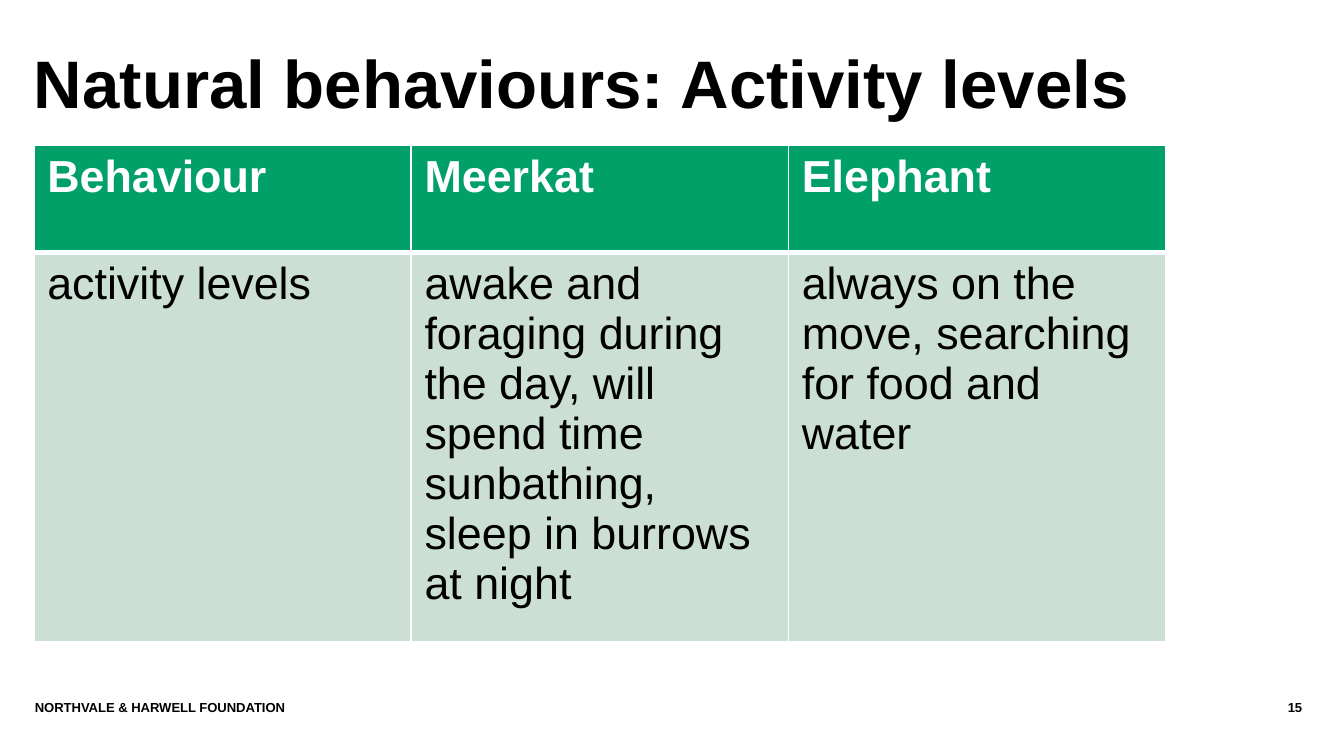
from dataclasses import dataclass

from lxml.etree import SubElement
from pptx import Presentation
from pptx.dml.color import RGBColor
from pptx.enum.text import MSO_ANCHOR, PP_ALIGN
from pptx.oxml.ns import qn
from pptx.util import Cm, Pt


@dataclass(frozen=True)
class Theme:
    font: str = "Arial"
    ink: str = "000000"
    paper: str = "FFFFFF"
    header_fill: str = "00A068"
    body_fill: str = "CCDFD4"
    title_size: int = 36
    table_size: int = 24
    footer_size: int = 7
    thin_rule: int = 1
    thick_rule: int = 3


@dataclass(frozen=True)
class TextItem:
    text: str
    left: float
    top: float
    width: float
    height: float
    size: int
    align: PP_ALIGN = PP_ALIGN.LEFT
    anchor: MSO_ANCHOR = MSO_ANCHOR.TOP
    line_spacing: float = 1.0


THEME = Theme()
MARGIN = 0.64
FOOTER_TOP = 13.23

TEXT_ITEMS = [
    TextItem("NORTHVALE & HARWELL FOUNDATION", 0.66, FOOTER_TOP, 21.36, 0.76,
             THEME.footer_size),
    TextItem("15", 22.1, FOOTER_TOP, 2.51, 0.76, THEME.footer_size,
             align=PP_ALIGN.RIGHT),
    TextItem("Natural behaviours: Activity levels", MARGIN, 0.69, 23.44, 1.93,
             THEME.title_size, anchor=MSO_ANCHOR.MIDDLE, line_spacing=0.85),
]

TABLE_TOP = 2.74
COLUMN_WIDTH = 7.13
ROW_HEIGHTS = [2.03, 6.86]
BEHAVIOUR_ROWS = [
    ["Behaviour", "Meerkat", "Elephant"],
    [
        "activity levels",
        "awake and foraging during the day, will spend time sunbathing, "
        "sleep in burrows at night",
        "always on the move, searching for food and water",
    ],
]


def write_text(frame, text: str, *, size: int, color: str, bold: bool,
               align: PP_ALIGN = PP_ALIGN.LEFT, line_spacing: float = 1.0) -> None:
    para = frame.paragraphs[0]
    para.alignment = align
    para.line_spacing = line_spacing
    span = para.add_run()
    span.text = text
    span.font.name = THEME.font
    span.font.size = Pt(size)
    span.font.bold = bold
    span.font.color.rgb = RGBColor.from_string(color)


def add_text(page, item: TextItem) -> None:
    box = page.shapes.add_textbox(Cm(item.left), Cm(item.top),
                                  Cm(item.width), Cm(item.height))
    frame = box.text_frame
    frame.word_wrap = True
    frame.vertical_anchor = item.anchor
    frame.margin_left = frame.margin_right = 0
    frame.margin_top = frame.margin_bottom = 0
    write_text(frame, item.text, size=item.size, color=THEME.ink, bold=True,
               align=item.align, line_spacing=item.line_spacing)


def set_borders(cell, *, top: int, bottom: int) -> None:
    """Rule all four sides; the schema wants borders ahead of the fill."""
    properties = cell._tc.get_or_add_tcPr()
    widths = {"a:lnL": THEME.thin_rule, "a:lnR": THEME.thin_rule,
              "a:lnT": top, "a:lnB": bottom}
    for position, (tag, width) in enumerate(widths.items()):
        line = SubElement(properties, qn(tag), w=str(Pt(width)))
        fill = SubElement(line, qn("a:solidFill"))
        SubElement(fill, qn("a:srgbClr"), val=THEME.paper)
        properties.insert(position, line)


def add_behaviour_table(page) -> None:
    column_count = len(BEHAVIOUR_ROWS[0])
    table = page.shapes.add_table(
        len(BEHAVIOUR_ROWS), column_count, Cm(MARGIN), Cm(TABLE_TOP),
        Cm(COLUMN_WIDTH * column_count), Cm(sum(ROW_HEIGHTS))).table
    for column in table.columns:
        column.width = Cm(COLUMN_WIDTH)
    for row_index, texts in enumerate(BEHAVIOUR_ROWS):
        table.rows[row_index].height = Cm(ROW_HEIGHTS[row_index])
        header = row_index == 0
        for column_index, text in enumerate(texts):
            cell = table.cell(row_index, column_index)
            cell.fill.solid()
            cell.fill.fore_color.rgb = RGBColor.from_string(
                THEME.header_fill if header else THEME.body_fill)
            set_borders(cell,
                        top=THEME.thin_rule if header else THEME.thick_rule,
                        bottom=THEME.thick_rule if header else THEME.thin_rule)
            write_text(cell.text_frame, text, size=THEME.table_size, bold=header,
                       color=THEME.paper if header else THEME.ink)


def main() -> None:
    deck = Presentation()
    deck.slide_width = Cm(25.4)
    deck.slide_height = Cm(14.29)
    page = deck.slides.add_slide(deck.slide_layouts[6])
    page.background.fill.solid()
    page.background.fill.fore_color.rgb = RGBColor.from_string(THEME.paper)
    for item in TEXT_ITEMS:
        add_text(page, item)
    add_behaviour_table(page)
    deck.save("out.pptx")


if __name__ == "__main__":
    main()
